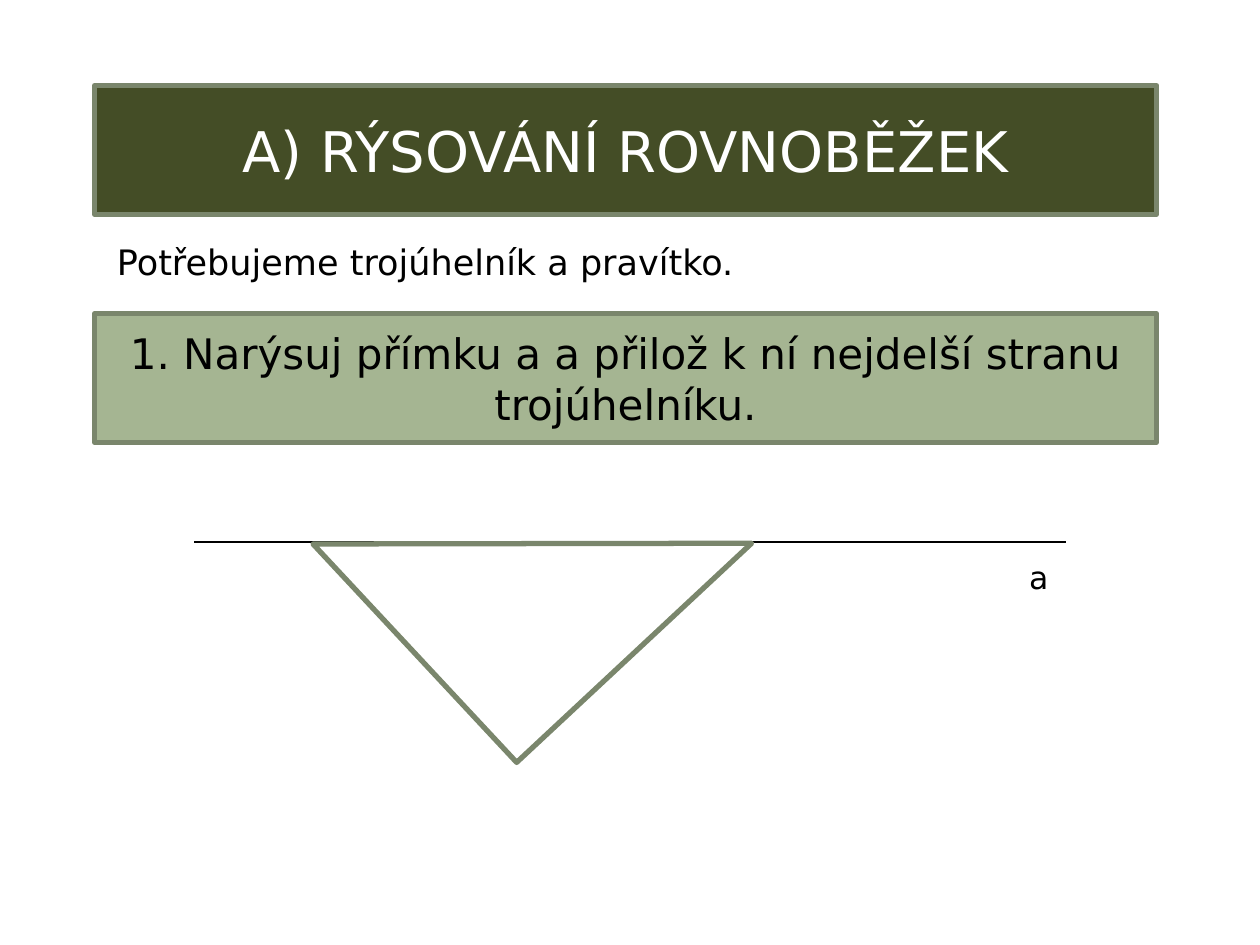
"""Build the slide on drawing parallel lines with a set square."""
import pptx
import pptx.util
import pptx.dml.color
import pptx.enum.shapes
import pptx.enum.text
import lxml.etree

Inches, Pt = pptx.util.Inches, pptx.util.Pt
KIND = pptx.enum.shapes.MSO_SHAPE
ALIGN = pptx.enum.text.PP_ALIGN
ANCHOR = pptx.enum.text.MSO_ANCHOR
SIZING = pptx.enum.text.MSO_AUTO_SIZE

HUES = {"dark": "444D26", "light": "A5B592", "edge": "7A866C",
        "ink": "000000", "white": "FFFFFF"}
FACE = "DejaVu Sans"

TITLE = ("A) RÝSOVÁNÍ ROVNOBĚŽEK", (0.75, 0.68, 8.43, 1.02), 32, "white", "dark")
STEP = ("1. Narýsuj přímku a a přilož k ní nejdelší stranu trojúhelníku.",
        (0.75, 2.49, 8.43, 1.02), 24, "ink", "light")
NOTES = [
    ("Potřebujeme trojúhelník a pravítko.", (0.83, 1.86, 8.11, 0.44), 20),
    ("a", (8.07, 4.38, 0.63, 0.4), 18),
]
LINE = (1.54, 4.3, 8.46, 4.3)
SQUARE = (2.95, 3.13, 2.55, 2.37)
TURN = 317


def hue(name):
    return pptx.dml.color.RGBColor.from_string(HUES[name])


def span(box):
    return [Inches(n) for n in box]


def style(item, form):
    for key, value in form.items():
        setattr(item, key, value)


def stroke(item, name, width):
    item.line.color.rgb = hue(name)
    item.line.width = Pt(width)


def write(shape, text, size, ink, align, anchor):
    frame = shape.text_frame
    style(frame, {"text": text, "word_wrap": True,
                  "auto_size": SIZING.NONE, "vertical_anchor": anchor})
    para = frame.paragraphs[0]
    para.alignment = align
    font = para.runs[0].font
    style(font, {"name": FACE, "size": Pt(size)})
    font.color.rgb = hue(ink)


def banner(shape, text, size, ink, fill):
    shape.fill.solid()
    shape.fill.fore_color.rgb = hue(fill)
    stroke(shape, "edge", 3)
    write(shape, text, size, ink, ALIGN.CENTER, ANCHOR.MIDDLE)


def main():
    deck = pptx.Presentation()
    style(deck, {"slide_width": Inches(10), "slide_height": Inches(7.5)})
    slide = deck.slides.add_slide(deck.slide_layouts[5])
    shapes = slide.shapes

    text, box, *look = TITLE
    title = shapes.title
    style(title, dict(zip(("left", "top", "width", "height"), span(box))))
    banner(title, text, *look)

    text, box, *look = STEP
    step = shapes.add_shape(KIND.RECTANGLE, *span(box))
    step.shadow.inherit = False
    banner(step, text, *look)

    for text, box, size in NOTES:
        note = shapes.add_textbox(*span(box))
        write(note, text, size, "ink", ALIGN.LEFT, ANCHOR.TOP)

    line = shapes.add_connector(pptx.enum.shapes.MSO_CONNECTOR.STRAIGHT, *span(LINE))
    stroke(line, "ink", 1)
    lxml.etree.SubElement(line._element.spPr, pptx.oxml.ns.qn("a:effectLst"))

    square = shapes.add_shape(KIND.RIGHT_TRIANGLE, *span(SQUARE))
    square.shadow.inherit = False
    square.rotation = TURN
    square.fill.background()
    stroke(square, "edge", 3)

    deck.save("out.pptx")


if __name__ == "__main__":
    main()
